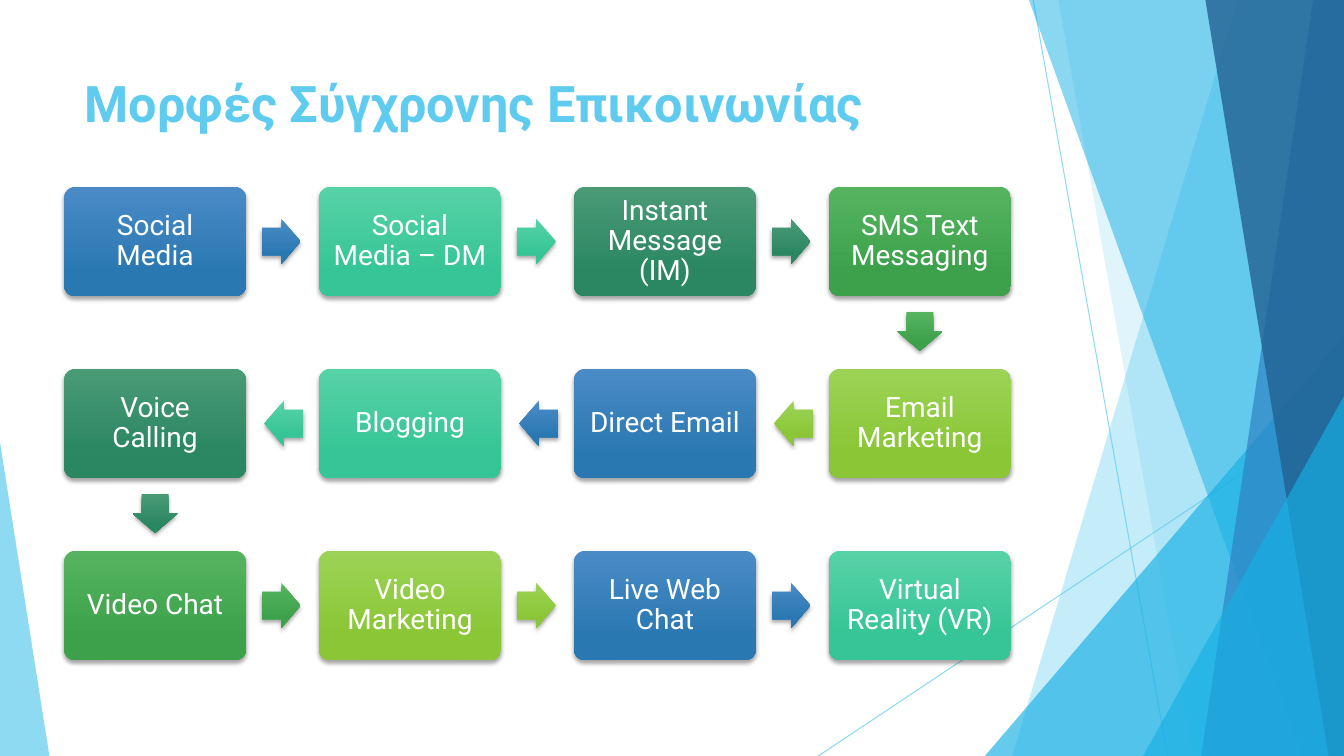
from dataclasses import dataclass
from itertools import cycle

from pptx import Presentation
from pptx.dml.color import RGBColor as Rgb
from pptx.enum.shapes import MSO_CONNECTOR as Connector, MSO_SHAPE as Preset
from pptx.enum.text import MSO_ANCHOR as Anchor, PP_ALIGN as Align
from pptx.oxml import parse_xml
from pptx.oxml.ns import nsdecls, qn
from pptx.util import Pt

WIDTH, HEIGHT = 960, 540


@dataclass(frozen=True)
class Theme:
    font: str = "Roboto"
    title_size: int = 36
    step_size: int = 20
    white: str = "FFFFFF"
    sky: str = "5FCBEF"
    cyan: str = "17B0E4"
    azure: str = "2E83C3"
    navy: str = "226292"
    step_gradients: tuple = (
        ("4A8BC6", "2A78B2"),
        ("56D2A7", "36C596"),
        ("4A9A76", "2A8762"),
        ("56B461", "3CA14A"),
        ("9CD356", "8AC635"),
    )


def apply(target, values):
    for name, value in values.items():
        setattr(target, name, value)


class Painter:
    def __init__(self, page, theme):
        self.page = page
        self.theme = theme

    def set_alpha(self, shape, percent):
        for color in shape._element.spPr.iter(qn("a:srgbClr")):
            color.append(parse_xml(f'<a:alpha {nsdecls("a")} val="{percent * 1000}"/>'))

    def tint(self, shape, color, percent):
        shape.shadow.inherit = False
        shape.fill.solid()
        shape.fill.fore_color.rgb = Rgb.from_string(color)
        shape.line.fill.background()
        self.set_alpha(shape, percent)

    def line(self, start, end):
        line = self.page.shapes.add_connector(
            Connector.STRAIGHT, *(Pt(value) for value in (*start, *end)))
        line.line.color.rgb = Rgb.from_string(self.theme.sky)
        line.line.width = Pt(0.75)
        self.set_alpha(line, 70)
        line._element.spPr.append(parse_xml(f'<a:effectLst {nsdecls("a")}/>'))

    def band(self, top_left, bottom_left, color, percent):
        """Fill from a slanted left edge to the right edge of the slide."""
        outline = self.page.shapes.build_freeform(top_left, 0, scale=Pt(1))
        outline.add_line_segments([(WIDTH, 0), (WIDTH, HEIGHT), (bottom_left, HEIGHT)])
        self.tint(outline.convert_to_shape(), color, percent)

    def preset(self, kind, left, top, width, height, adjustments):
        shape = self.page.shapes.add_shape(kind, Pt(left), Pt(top), Pt(width), Pt(height))
        for index, value in enumerate(adjustments):
            shape.adjustments[index] = value
        return shape

    def corner(self, left, top, width, apex, color, percent):
        """Draw a right triangle that stands on the bottom of the slide."""
        shape = self.preset(Preset.ISOSCELES_TRIANGLE, left, top, width, HEIGHT - top, [apex])
        self.tint(shape, color, percent)

    def raised(self, kind, center, size, adjustments, gradient):
        """Draw a shape with a vertical gradient and a soft shadow around a centre."""
        left, top = (middle - length / 2 for middle, length in zip(center, size))
        shape = self.preset(kind, left, top, *size, adjustments)
        shape.fill.gradient()
        shape.fill.gradient_angle = 270
        for stop, position, color in zip(shape.fill.gradient_stops, (0, 0.78), gradient):
            stop.position = position
            stop.color.rgb = Rgb.from_string(color)
        shape.line.fill.background()
        shape._element.spPr.append(parse_xml(
            f'<a:effectLst {nsdecls("a")}>'
            f'<a:outerShdw blurRad="{Pt(3)}" dist="{Pt(2)}" dir="5400000" rotWithShape="0">'
            '<a:srgbClr val="000000"><a:alpha val="35000"/></a:srgbClr>'
            "</a:outerShdw></a:effectLst>"))
        return shape

    def add_text(self, shape, text, color, frame_format, para_format, font_format):
        frame = shape.text_frame
        apply(frame, {"word_wrap": True, **frame_format})
        para = frame.paragraphs[0]
        apply(para, para_format)
        span = para.add_run()
        span.text = text
        apply(span.font, {"name": self.theme.font, **font_format})
        span.font.color.rgb = Rgb.from_string(color)

    def title(self, text, left, top, width, height):
        box = self.page.shapes.add_textbox(Pt(left), Pt(top), Pt(width), Pt(height))
        self.add_text(box, text, self.theme.sky, {"vertical_anchor": Anchor.TOP},
                      {"alignment": Align.LEFT},
                      {"size": Pt(self.theme.title_size), "bold": True})

    def step(self, text, center, gradient):
        box = self.raised(Preset.ROUNDED_RECTANGLE, center, (130, 78), [0.1], gradient)
        margins = {f"margin_{side}": Pt(6) for side in ("left", "top", "right", "bottom")}
        self.add_text(box, text, self.theme.white,
                      {"vertical_anchor": Anchor.MIDDLE, **margins},
                      {"alignment": Align.CENTER, "line_spacing": 0.9},
                      {"size": Pt(self.theme.step_size)})

    def arrow(self, start, end, gradient):
        """Point from one step towards the next, just short of halfway."""
        center = [a + 0.495 * (b - a) for a, b in zip(start, end)]
        if start[0] == end[0]:
            kind, size = Preset.DOWN_ARROW, (32.3, 27.6)
        else:
            kind = Preset.RIGHT_ARROW if end[0] > start[0] else Preset.LEFT_ARROW
            size = (27.6, 32.3)
        self.raised(kind, center, size, [0.6, 0.5], gradient)


def draw_backdrop(painter):
    theme = painter.theme
    painter.line((738, 0), (834, HEIGHT))
    painter.line((WIDTH, 290), (584.5, HEIGHT))
    painter.band(884, 723, theme.sky, 36)
    painter.band(756, 852, theme.sky, 20)
    painter.corner(703.5, 240, 256.5, 1, theme.cyan, 66)
    painter.band(735, 929.5, theme.cyan, 50)
    painter.band(938, 858.5, theme.azure, 70)
    painter.band(861, 949, theme.navy, 80)
    painter.corner(816.5, 283, 143.5, 1, theme.cyan, 66)
    painter.corner(0, 316, 35.3, 0, theme.sky, 70)


def draw_steps(painter, steps, columns=4):
    """Lay the steps out in rows that run right and left in turn."""
    centers = []
    for index in range(len(steps)):
        row, column = divmod(index, columns)
        if row % 2:
            column = columns - 1 - column
        centers.append((110.8 + 182.1 * column, 172.5 + 130 * row))
    gradients = cycle(painter.theme.step_gradients)
    for text, center, following, gradient in zip(
            steps, centers, centers[1:] + [None], gradients):
        painter.step(text, center, gradient)
        if following:
            painter.arrow(center, following, gradient)


def main():
    deck = Presentation()
    apply(deck, {"slide_width": Pt(WIDTH), "slide_height": Pt(HEIGHT)})
    painter = Painter(deck.slides.add_slide(deck.slide_layouts[6]), Theme())
    draw_backdrop(painter)
    painter.title("Μορφές Σύγχρονης Επικοινωνίας", 53.3, 48, 677, 104)
    draw_steps(painter, [
        "Social Media", "Social Media – DM", "Instant Message (IM)", "SMS Text Messaging",
        "Email Marketing", "Direct Email", "Blogging", "Voice Calling",
        "Video Chat", "Video Marketing", "Live Web Chat", "Virtual Reality (VR)",
    ])
    deck.save("out.pptx")


if __name__ == "__main__":
    main()
